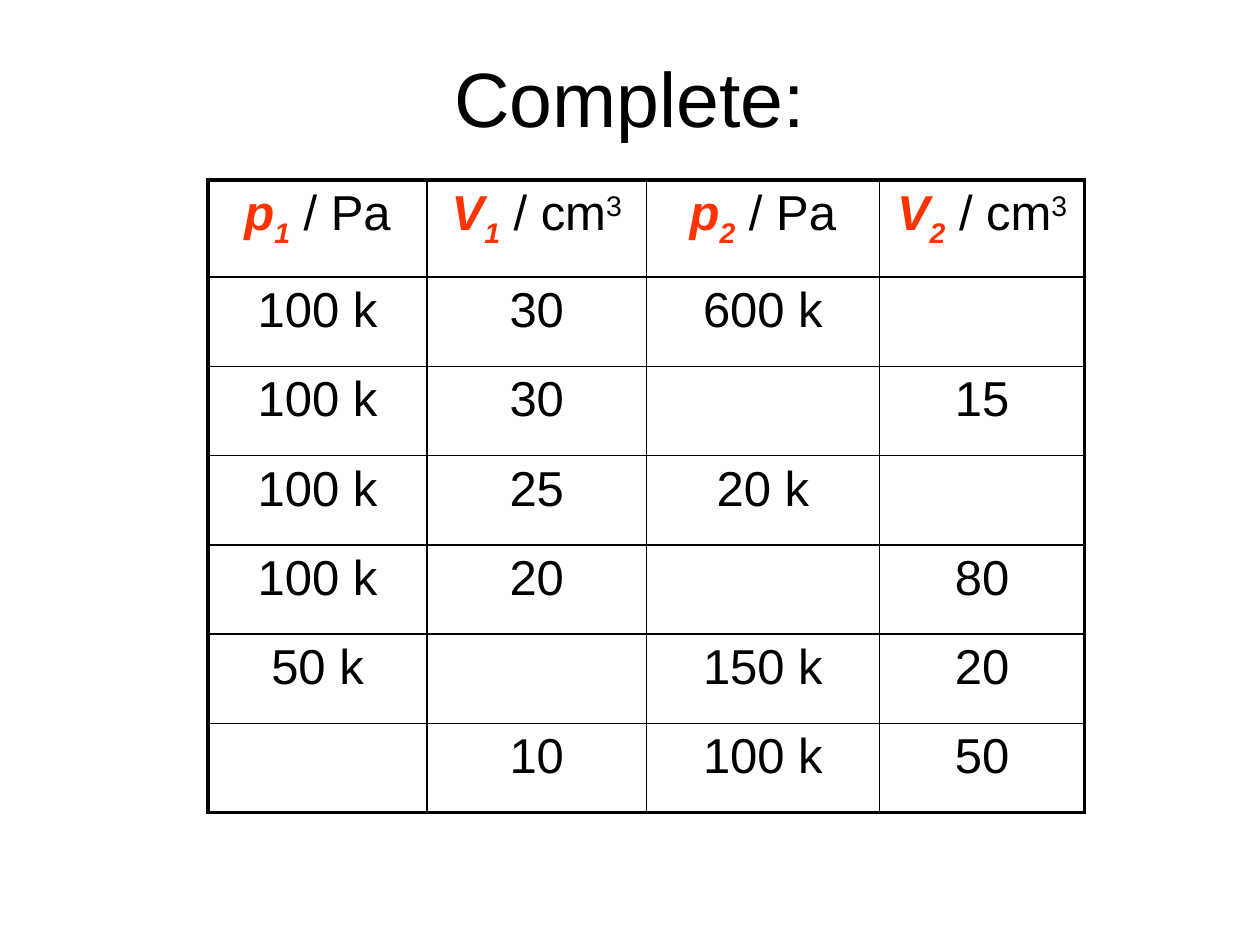
from lxml import etree
from pptx import Presentation
from pptx import util as u
from pptx.dml.color import RGBColor
from pptx.enum import text
from pptx.oxml.ns import qn

TITLE = "Complete:"
HEADERS = [("p", "1", " / Pa", ""), ("V", "1", " / cm", "3"),
           ("p", "2", " / Pa", ""), ("V", "2", " / cm", "3")]
ROWS = [("100 k", "30", "600 k", ""),
        ("100 k", "30", "", "15"),
        ("100 k", "25", "20 k", ""),
        ("100 k", "20", "", "80"),
        ("50 k", "", "150 k", "20"),
        ("", "10", "100 k", "50")]
LEFT, TOP, HEIGHT = 1.65, 1.43, 5.02
COL_WIDTHS = [1.74, 1.74, 1.85, 1.63]
HEADER_HEIGHT = 0.77
BLACK, RED = "000000", "FF3300"
OUTER, INNER = 2.25, 1


def color(hex_string):
    return RGBColor.from_string(hex_string)


def add_run(p, content, size=28, fill=BLACK, strong=False, baseline=0):
    r = p.add_run()
    r.text = content
    f = r.font
    f.name, f.size = "Arial", u.Pt(size)
    f.bold = f.italic = strong
    f.color.rgb = color(fill)
    if baseline:
        r._r.get_or_add_rPr().set("baseline", str(baseline * 1000))


def add_border(cell, side, width):
    ln = etree.SubElement(cell._tc.get_or_add_tcPr(), qn("a:ln" + side), w=str(u.Pt(width)))
    fill = etree.SubElement(ln, qn("a:solidFill"))
    etree.SubElement(fill, qn("a:srgbClr"), val=BLACK)


prs = Presentation()
prs.slide_width, prs.slide_height = u.Inches(10), u.Inches(7.5)
s = prs.slides.add_slide(prs.slide_layouts[5])

title = s.shapes.title
title.left, title.top = u.Inches(0.5), u.Inches(0.3)
title.width, title.height = u.Inches(9), u.Inches(0.93)
tf = title.text_frame
tf.vertical_anchor = text.MSO_ANCHOR.MIDDLE
tf.paragraphs[0].alignment = text.PP_ALIGN.CENTER
add_run(tf.paragraphs[0], TITLE, size=44)

n_rows, n_cols = len(ROWS) + 1, len(COL_WIDTHS)
table = s.shapes.add_table(n_rows, n_cols, u.Inches(LEFT), u.Inches(TOP),
                           u.Inches(sum(COL_WIDTHS)), u.Inches(HEIGHT)).table
table.first_row = table.horz_banding = False
for col, width in zip(table.columns, COL_WIDTHS):
    col.width = u.Inches(width)
for i, row in enumerate(table.rows):
    row.height = u.Inches((HEIGHT - HEADER_HEIGHT) / len(ROWS) if i else HEADER_HEIGHT)

for i in range(n_rows):
    for j in range(n_cols):
        cell = table.cell(i, j)
        edges = {"L": j == 0, "R": j == n_cols - 1, "T": i == 0, "B": i == n_rows - 1}
        for side, is_outer in edges.items():
            add_border(cell, side, OUTER if is_outer else INNER)
        cell.fill.background()
        p = cell.text_frame.paragraphs[0]
        p.alignment = text.PP_ALIGN.CENTER
        if i == 0:
            symbol, index, unit, power = HEADERS[j]
            add_run(p, symbol, fill=RED, strong=True)
            add_run(p, index, fill=RED, strong=True, baseline=-25)
            add_run(p, unit)
            if power:
                add_run(p, power, baseline=30)
        elif ROWS[i - 1][j]:
            add_run(p, ROWS[i - 1][j])

prs.save("out.pptx")
